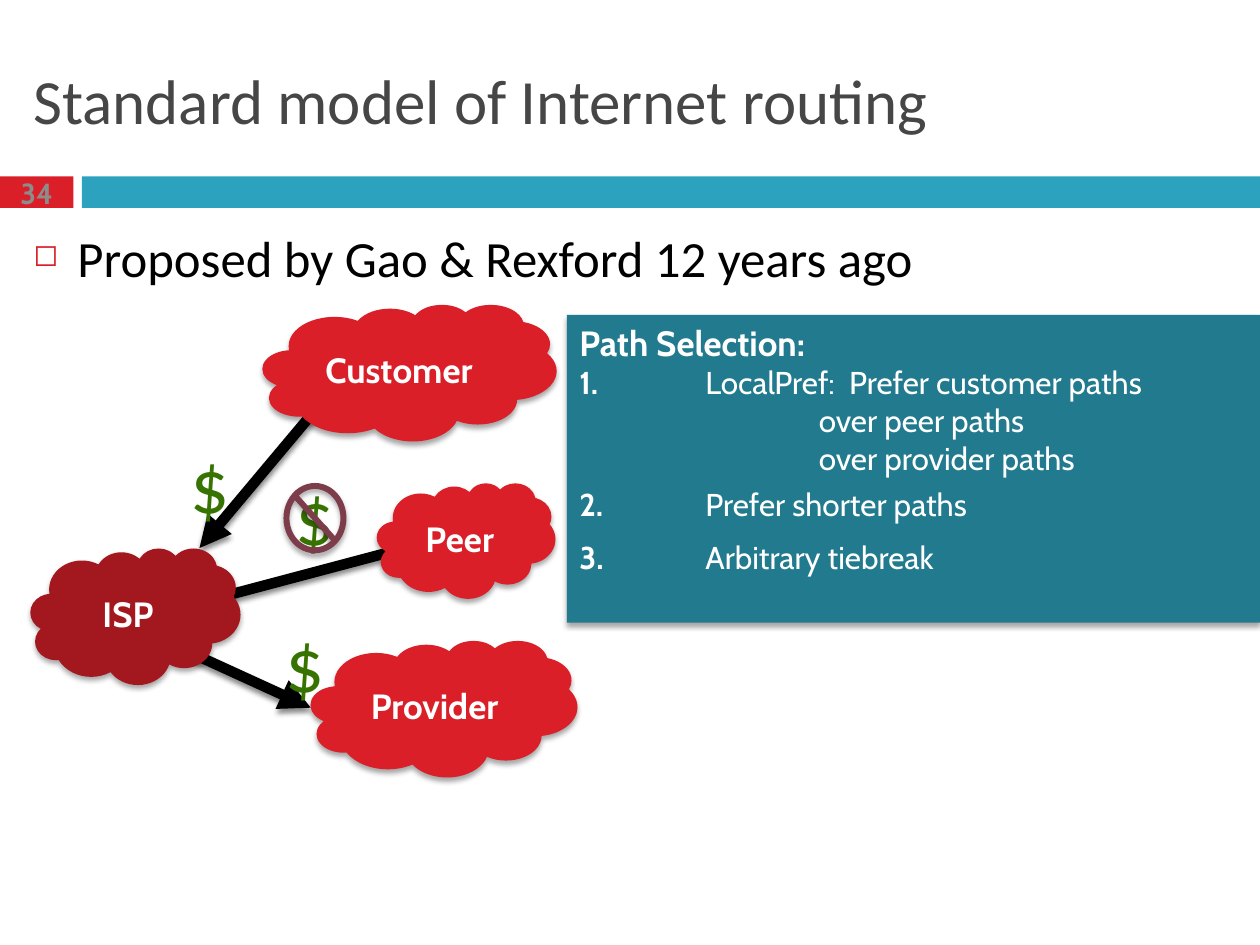
import dataclasses

import lxml.etree
import pptx
import pptx.dml.color
import pptx.enum.shapes
import pptx.enum.text
import pptx.oxml
import pptx.oxml.ns
import pptx.util

PRESET = pptx.enum.shapes.MSO_SHAPE
ANCHOR = pptx.enum.text.MSO_ANCHOR
ALIGN = pptx.enum.text.PP_ALIGN
CELL = 1 / 12  # inches; the slide is 120 columns by 90 rows


@dataclasses.dataclass(frozen=True)
class Theme:
    heading_font: str = "Calibri"
    label_font: str = "Cabin"
    red: str = "DA1F28"
    dark_red: str = "A3171E"
    blue: str = "2DA2BF"
    teal: str = "227A8F"
    green: str = "377300"
    plum: str = "7D3C4A"
    title_ink: str = "464646"
    number_ink: str = "8C8C8C"
    black: str = "000000"
    white: str = "FFFFFF"
    title_size: float = 36
    body_size: float = 29
    number_size: float = 16.6
    label_size: float = 20
    rule_size: float = 18
    dollar_size: float = 44
    link_width: float = 6


THEME = Theme()


@dataclasses.dataclass(frozen=True)
class Box:
    """A rectangle in columns and rows of the slide grid."""
    left: float
    top: float
    width: float
    height: float

    def inner(self, left, top, width, height):
        return Box(self.left + left, self.top + top, width, height)

    def point(self, column, row):
        return grid(self.left + column), grid(self.top + row)

    def lengths(self):
        return [grid(n) for n in (self.left, self.top, self.width, self.height)]


def grid(cells):
    return pptx.util.Inches(cells * CELL)


def rgb(color):
    return pptx.dml.color.RGBColor.from_string(color)


def set_font(font, name, size, color, bold=False):
    font.name, font.size, font.bold = name, pptx.util.Pt(size), bold
    font.color.rgb = rgb(color)


def add_shadow(part, opacity=35, distance=2):
    effects = pptx.oxml.parse_xml(
        f'<a:effectLst {pptx.oxml.ns.nsdecls("a")}>'
        f'<a:outerShdw blurRad="{pptx.util.Pt(3)}" dist="{pptx.util.Pt(distance)}"'
        ' dir="5400000" rotWithShape="0"><a:srgbClr val="000000">'
        f'<a:alpha val="{opacity * 1000}"/></a:srgbClr></a:outerShdw></a:effectLst>')
    part._element.spPr.append(effects)


def add_block(shapes, box, preset, fill, shadow=True):
    block = shapes.add_shape(preset, *box.lengths())
    block.fill.solid()
    block.fill.fore_color.rgb = rgb(fill)
    block.line.fill.background()
    if shadow:
        add_shadow(block)
    else:
        block.shadow.inherit = False
    return block


def add_text(shapes, box, words, font, size, color, bold=False,
             anchor=ANCHOR.TOP, align=ALIGN.LEFT):
    frame = shapes.add_textbox(*box.lengths()).text_frame
    frame.word_wrap, frame.vertical_anchor = True, anchor
    line = frame.paragraphs[0]
    line.text, line.alignment = words, align
    set_font(line.font, font, size, color, bold)
    return line


def set_indent(line, margin, hanging=0):
    properties = line._p.get_or_add_pPr()
    properties.set("marL", str(pptx.util.Inches(margin)))
    properties.set("indent", str(-pptx.util.Inches(hanging)))
    return properties


def draw_header(shapes, box, title, number):
    add_block(shapes, box.inner(0, 16.8, 7, 3), PRESET.RECTANGLE, THEME.red, False)
    add_block(shapes, box.inner(7.8, 16.8, box.width - 7.8, 3),
              PRESET.RECTANGLE, THEME.blue, False)
    add_text(shapes, box.inner(2, 3, box.width - 4, 13), title, THEME.heading_font,
             THEME.title_size, THEME.title_ink, anchor=ANCHOR.MIDDLE)
    add_text(shapes, box.inner(0, 16.4, 7, 4), number, THEME.label_font,
             THEME.number_size, THEME.number_ink, True, ANCHOR.MIDDLE, ALIGN.CENTER)


def draw_body(shapes, box, statement):
    line = add_text(shapes, box, statement, THEME.heading_font,
                    THEME.body_size, THEME.black)
    line.space_before = pptx.util.Pt(7)
    bullet = pptx.oxml.parse_xml(
        f'<a:pPr {pptx.oxml.ns.nsdecls("a")}><a:buClr><a:srgbClr val="{THEME.red}"/>'
        '</a:buClr><a:buSzPct val="60000"/><a:buChar char="◻"/></a:pPr>')
    default_font = set_indent(line, 0.35, 0.35).find(pptx.oxml.ns.qn("a:defRPr"))
    for part in list(bullet):
        default_font.addprevious(part)


def draw_rules(shapes, box, heading, rules):
    """Rules are (number, words, space before); a rule without number continues."""
    frame = add_block(shapes, box, PRESET.RECTANGLE, THEME.teal).text_frame
    frame.word_wrap, frame.vertical_anchor = True, ANCHOR.TOP
    top = frame.paragraphs[0]
    top.text, top.alignment = heading, ALIGN.LEFT
    set_font(top.font, THEME.label_font, THEME.label_size, THEME.white, True)
    for number, words, gap in rules:
        line = frame.add_paragraph()
        line.alignment, line.space_before = ALIGN.LEFT, pptx.util.Pt(gap)
        set_font(line.font, THEME.label_font, THEME.rule_size, THEME.white)
        if number:
            set_indent(line, 1, 1)
            mark = line.add_run()
            mark.text, mark.font.bold = f"{number}\t", True
        else:
            set_indent(line, 1.9)
        line.add_run().text = words


def draw_link(shapes, start, end, arrow):
    link = shapes.add_connector(pptx.enum.shapes.MSO_CONNECTOR.STRAIGHT, *start, *end)
    link.line.color.rgb = rgb(THEME.black)
    link.line.width = pptx.util.Pt(THEME.link_width)
    if arrow:
        lxml.etree.SubElement(link.line._get_or_add_ln(),
                              pptx.oxml.ns.qn("a:tailEnd"), type="triangle")
    add_shadow(link, 45, 2.4)


def draw_cloud(shapes, box, name, fill):
    frame = add_block(shapes, box, PRESET.CLOUD, fill).text_frame
    frame.vertical_anchor = ANCHOR.MIDDLE
    label = frame.paragraphs[0]
    label.text, label.alignment = name, ALIGN.CENTER
    set_font(label.font, THEME.label_font, THEME.label_size, THEME.white, True)


def draw_dollar(shapes, box):
    add_text(shapes, box, "$", THEME.heading_font, THEME.dollar_size, THEME.green)


def draw_network(shapes, box):
    for start, end, arrow in (((33, 6.5), (19, 23.2), True),
                              ((15.6, 29.3), (38.6, 23.2), False),
                              ((15.6, 32), (29.6, 38.4), True)):
        draw_link(shapes, box.point(*start), box.point(*end), arrow)
    for name, place, fill in (("ISP", (2.9, 23.2, 20, 13), THEME.dark_red),
                              ("Customer", (25, 0, 28, 13), THEME.red),
                              ("Peer", (35.9, 17, 17, 11), THEME.red),
                              ("Provider", (29.6, 32, 25.4, 13), THEME.red)):
        draw_cloud(shapes, box.inner(*place), name, fill)
    unpaid = shapes.add_group_shape().shapes
    draw_dollar(unpaid, box.inner(27, 15, 8, 10.1))
    ban = add_block(unpaid, box.inner(27, 17, 6, 6.7), PRESET.NO_SYMBOL, THEME.plum)
    ban.adjustments[0] = 0.095
    for column, row in ((17, 12), (26, 29)):
        draw_dollar(shapes, box.inner(column, row, 5, 10.1))


def main():
    deck = pptx.Presentation()
    deck.slide_width, deck.slide_height = grid(120), grid(90)
    shapes = deck.slides.add_slide(deck.slide_layouts[6]).shapes
    draw_header(shapes, Box(0, 0, 120, 20), "Standard model of Internet routing", "34")
    draw_body(shapes, Box(2, 21, 116, 67), "Proposed by Gao & Rexford 12 years ago")
    draw_rules(shapes, Box(54, 30, 66, 29.3), "Path Selection:", (
        ("1.", "LocalPref:  Prefer customer paths", 0),
        (None, "over peer paths", 0),
        (None, "over provider paths", 0),
        ("2.", "Prefer shorter paths", 4.9),
        ("3.", "Arbitrary tiebreak", 8.5)))
    draw_network(shapes, Box(0, 29, 55, 45))
    deck.save("out.pptx")


if __name__ == "__main__":
    main()
